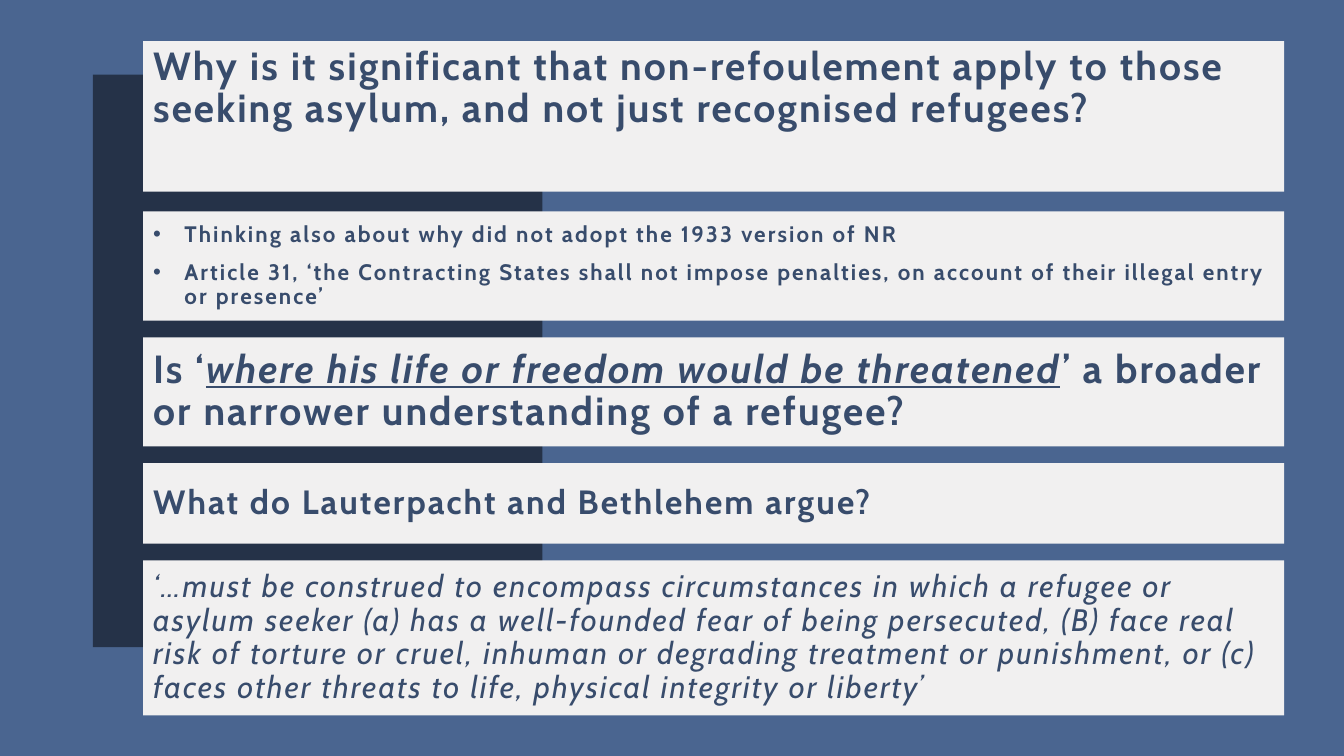
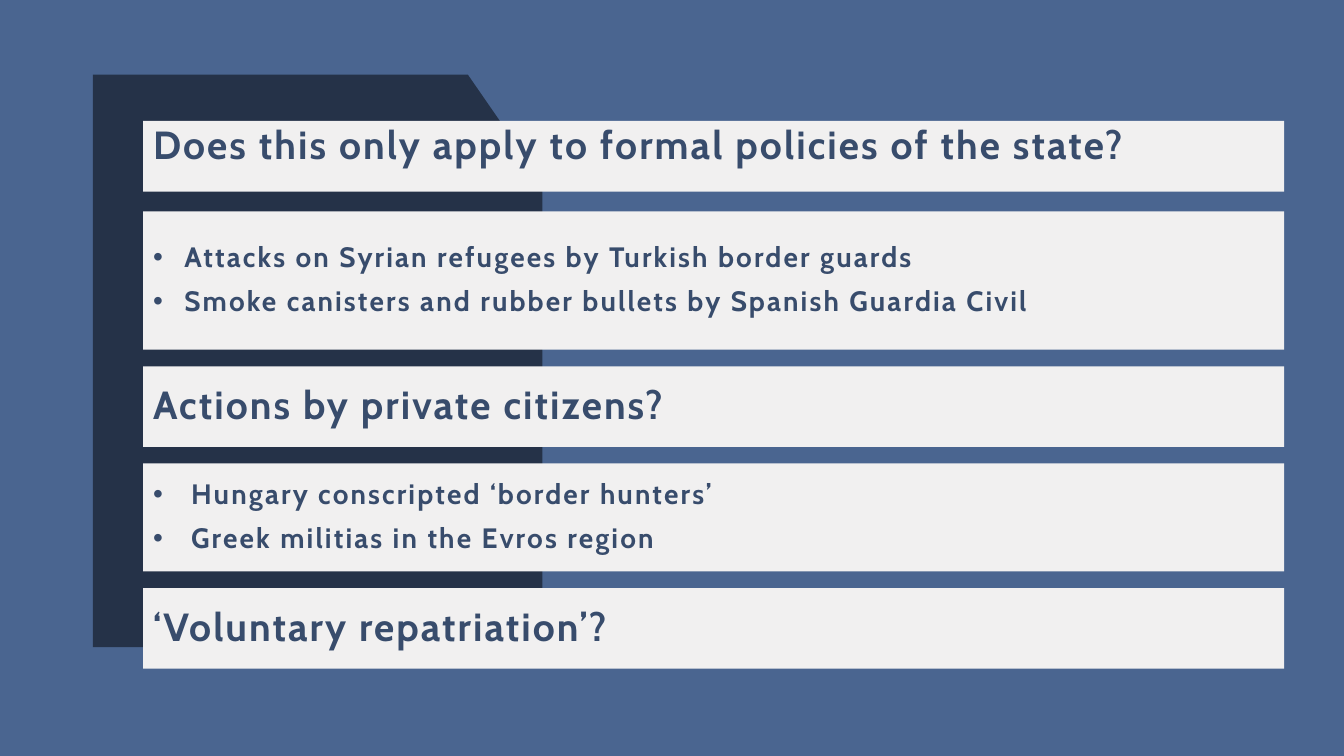
from lxml.etree import SubElement
from pptx import Presentation
from pptx.dml.color import RGBColor
from pptx.enum.shapes import MSO_SHAPE
from pptx.enum.text import MSO_ANCHOR, PP_ALIGN
from pptx.oxml.ns import qn
from pptx.util import Cm, Pt

HUES = {"back": "4A6590", "dark": "253248", "panel": "F1F0F0", "text": "384C6C"}
FACE = "Cabin"
LEFT, WIDTH = 3.61, 28.75
SPLIT = 4.83
GAPS = {"title": 0.5, "body": 0.42}
HEAD = {"size": Pt(28), "bold": True}
ASK = {"size": Pt(24), "bold": True}
QUOTE = {"size": Pt(22.2), "italic": True}
LIST = {"size": Pt(20), "bold": True}
SMALL = {"size": Pt(16), "bold": True}
STRESS = {"italic": True, "underline": True}


def apply(item, values):
    for name, value in values.items():
        setattr(item, name, value)


def paint(fill, hue):
    fill.solid()
    fill.fore_color.rgb = RGBColor.from_string(HUES[hue])


def finish(shape, hue):
    shape.shadow.inherit = False
    paint(shape.fill, hue)
    shape.line.fill.background()


def bullet(para, indent):
    props = para._p.get_or_add_pPr()
    props.set("marL", str(Cm(indent)))
    props.set("indent", str(-Cm(indent)))
    SubElement(props, qn("a:buFont"), typeface="Arial")
    SubElement(props, qn("a:buChar"), char="•")


def write(para, parts, style):
    for part in parts:
        text, extra = part if isinstance(part, tuple) else (part, {})
        run = para.add_run()
        run.text = text
        apply(run.font, {"name": FACE, **style, **extra})
        run.font.color.rgb = RGBColor.from_string(HUES["text"])
        run._r.get_or_add_rPr().set("spc", "150")


def panel(slide, box, lines, style, indent=0, anchor=MSO_ANCHOR.MIDDLE):
    shape = slide.shapes.add_shape(MSO_SHAPE.RECTANGLE, *map(Cm, box))
    finish(shape, "panel")
    frame = shape.text_frame
    apply(frame, {"word_wrap": True, "vertical_anchor": anchor})
    for index, parts in enumerate(lines):
        para = frame.add_paragraph() if index else frame.paragraphs[0]
        if indent:
            bullet(para, indent)
        apply(para, {"alignment": PP_ALIGN.LEFT, "line_spacing": 0.9,
                     "space_before": Pt(10 if index else 0)})
        write(para, parts, style)


def backdrop(slide, box):
    paint(slide.background.fill, "back")
    left, top, width, height = box
    right, base = left + width, top + height
    points = [(left, top), (right - 1.88, top), (right, top + 2.72),
              (right, base), (left, base)]
    start, *rest = [(Cm(x), Cm(y)) for x, y in points]
    build = slide.shapes.build_freeform(*start)
    build.add_line_segments(rest)
    finish(build.convert_to_shape(), "dark")


def stack(deck, title, height, rows):
    slide = deck.slides.add_slide(deck.slide_layouts[6])
    backdrop(slide, (2.34, 1.88, 11.33, 14.43))
    panel(slide, (LEFT, SPLIT - height, WIDTH, height), [[title]], HEAD,
          anchor=MSO_ANCHOR.TOP)
    top = SPLIT + GAPS["title"]
    for tall, lines, style, indent in rows:
        panel(slide, (LEFT, top, WIDTH, tall), lines, style, indent)
        top += tall + GAPS["body"]


SLIDES = [
    ("Why is it significant that non-refoulement apply to those seeking asylum, "
     "and not just recognised refugees?", 3.79, [
         (2.75, [["Thinking also about why did not adopt the 1933 version of NR"],
                 ["Article 31, ‘the Contracting States shall not impose penalties, "
                  "on account of their illegal entry or presence’"]], SMALL, 0.79),
         (2.75, [["Is ‘", ("where his life or freedom would be threatened", STRESS),
                  "’ a broader or narrower understanding of a refugee?"]], HEAD, 0),
         (2.03, [["What do Lauterpacht and Bethlehem argue?"]], ASK, 0),
         (3.91, [["‘…must be construed to encompass circumstances in which a "
                  "refugee or asylum seeker (a) has a well-founded fear of being "
                  "persecuted, (B) face real risk of torture or cruel, inhuman or "
                  "degrading treatment or punishment, or (c) faces other threats "
                  "to life, physical integrity or liberty’"]], QUOTE, 0),
     ]),
    ("Does this only apply to formal policies of the state?", 1.78, [
        (3.48, [["Attacks on Syrian refugees by Turkish border guards"],
                ["Smoke canisters and rubber bullets by Spanish Guardia Civil"]],
         LIST, 0.79),
        (2.03, [["Actions by private citizens?"]], HEAD, 0),
        (2.72, [["Hungary conscripted ‘border hunters’"],
                ["Greek militias in the Evros region"]], LIST, 0.96),
        (2.03, [["‘Voluntary repatriation’?"]], HEAD, 0),
    ]),
]


def main():
    deck = Presentation()
    apply(deck, {"slide_width": Cm(33.87), "slide_height": Cm(19.05)})
    for title, height, rows in SLIDES:
        stack(deck, title, height, rows)
    deck.save("out.pptx")


if __name__ == "__main__":
    main()
